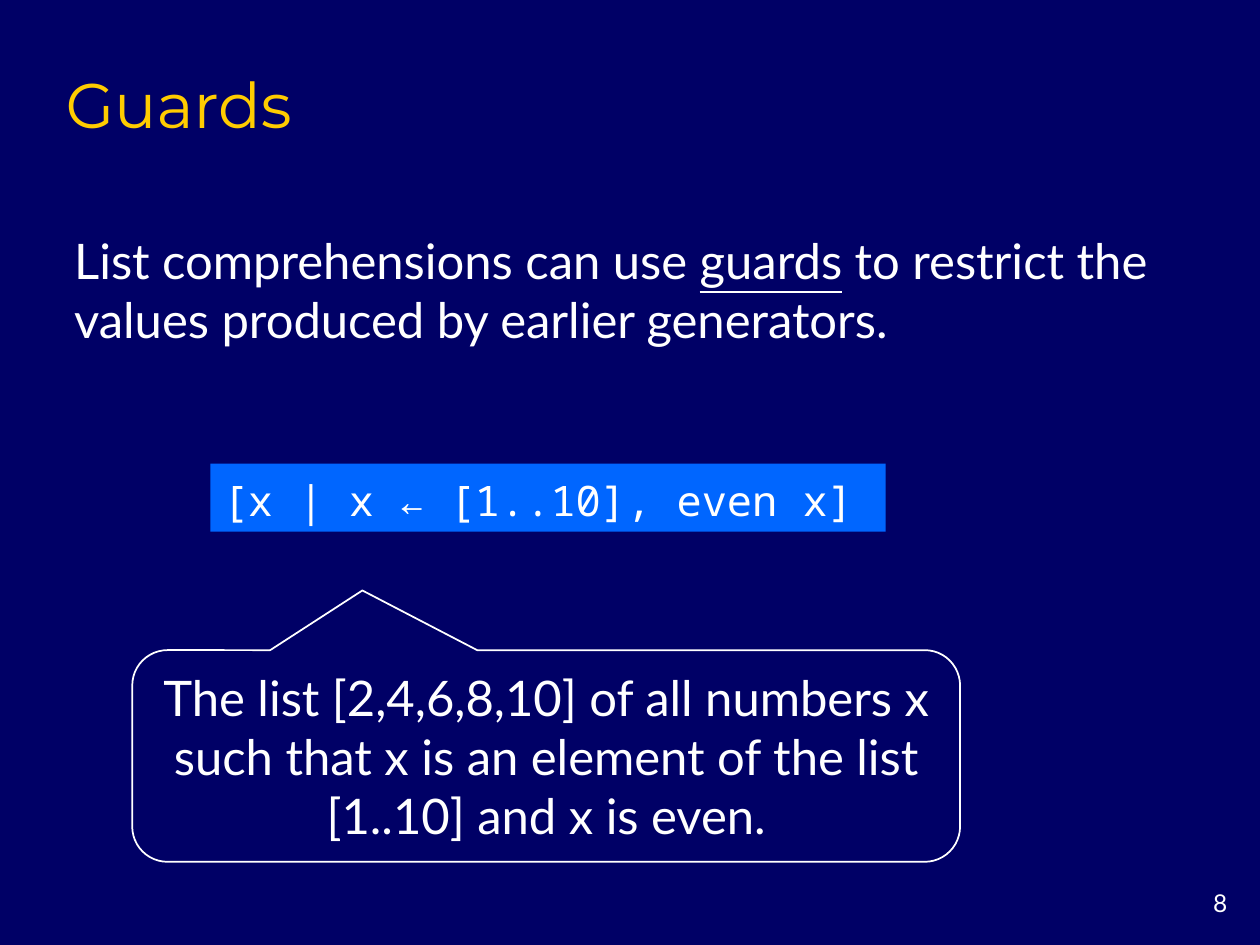
from dataclasses import dataclass

from pptx import Presentation
from pptx.dml.color import RGBColor as Rgb
from pptx.enum.shapes import MSO_SHAPE as Kind
from pptx.enum.text import MSO_ANCHOR as Anchor, PP_ALIGN as Align
from pptx.util import Inches, Pt


@dataclass(frozen=True)
class Theme:
    back: Rgb = Rgb(0x00, 0x00, 0x66)
    gold: Rgb = Rgb(0xFF, 0xCC, 0x00)
    white: Rgb = Rgb(0xFF, 0xFF, 0xFF)
    blue: Rgb = Rgb(0x00, 0x66, 0xFF)
    head: str = "Montserrat"
    sans: str = "Lato"
    mono: str = "Noto Sans Mono"
    title: int = 36
    body: int = 28
    code: int = 24
    page: int = 14


@dataclass(frozen=True)
class Box:
    left: float
    top: float
    width: float
    height: float

    def lengths(self) -> list:
        return [Inches(n) for n in (self.left, self.top, self.width, self.height)]


THEME = Theme()


def write(shape, parts: list[str], font: str, size: int, color: Rgb,
          align=Align.LEFT, anchor=Anchor.MIDDLE):
    frame = shape.text_frame
    frame.word_wrap = True
    frame.vertical_anchor = anchor
    para = frame.paragraphs[0]
    para.alignment = align
    for part in parts:
        run = para.add_run()
        run.text = part
        run.font.name = font
        run.font.size = Pt(size)
        run.font.color.rgb = color
    return para


def add_text(slide, box: Box, parts: list[str], size: int, **style):
    shape = slide.shapes.add_textbox(*box.lengths())
    return write(shape, parts, THEME.sans, size, THEME.white, **style)


def add_panel(slide, kind: Kind, box: Box):
    shape = slide.shapes.add_shape(kind, *box.lengths())
    shape.shadow.inherit = False
    return shape


def add_title(slide, box: Box, text: str) -> None:
    title = slide.shapes.title
    title.left, title.top, title.width, title.height = box.lengths()
    write(title, [text], THEME.head, THEME.title, THEME.gold, anchor=Anchor.BOTTOM)


def add_code(slide, box: Box, text: str) -> None:
    panel = add_panel(slide, Kind.RECTANGLE, box)
    panel.fill.solid()
    panel.fill.fore_color.rgb = THEME.blue
    panel.line.fill.background()
    para = write(panel, [text], THEME.mono, THEME.code, THEME.white)
    para.line_spacing = 1.1


def add_callout(slide, box: Box, text: str) -> None:
    panel = add_panel(slide, Kind.ROUNDED_RECTANGULAR_CALLOUT, box)
    for spot, value in enumerate((-0.222, -0.782, 0.167)):
        panel.adjustments[spot] = value
    panel.fill.background()
    panel.line.color.rgb = THEME.white
    panel.line.width = Pt(1)
    write(panel, [text], THEME.sans, THEME.body, THEME.white, align=Align.CENTER)


def main() -> None:
    deck = Presentation()
    deck.slide_width, deck.slide_height = Inches(10), Inches(7.5)
    slide = deck.slides.add_slide(deck.slide_layouts.get_by_name("Title Only"))
    slide.background.fill.solid()
    slide.background.fill.fore_color.rgb = THEME.back

    add_text(slide, Box(9.17, 7, 0.67, 0.33), ["8"], THEME.page,
             align=Align.RIGHT, anchor=Anchor.TOP)
    add_title(slide, Box(0.42, 0.42, 8.5, 0.75), "Guards")
    intro = add_text(slide, Box(0.49, 1.78, 8.98, 1.03),
                     ["List comprehensions can use ", "guards",
                      " to restrict the values produced by earlier generators."],
                     THEME.body)
    intro.runs[1].font.underline = True
    add_code(slide, Box(1.67, 3.68, 5.36, 0.54), "[x | x ← [1..10], even x]")
    add_callout(slide, Box(1.05, 5.16, 6.57, 1.68),
                "The list [2,4,6,8,10] of all numbers x such that x is an element "
                "of the list [1..10] and x is even.")
    deck.save("out.pptx")


if __name__ == "__main__":
    main()
